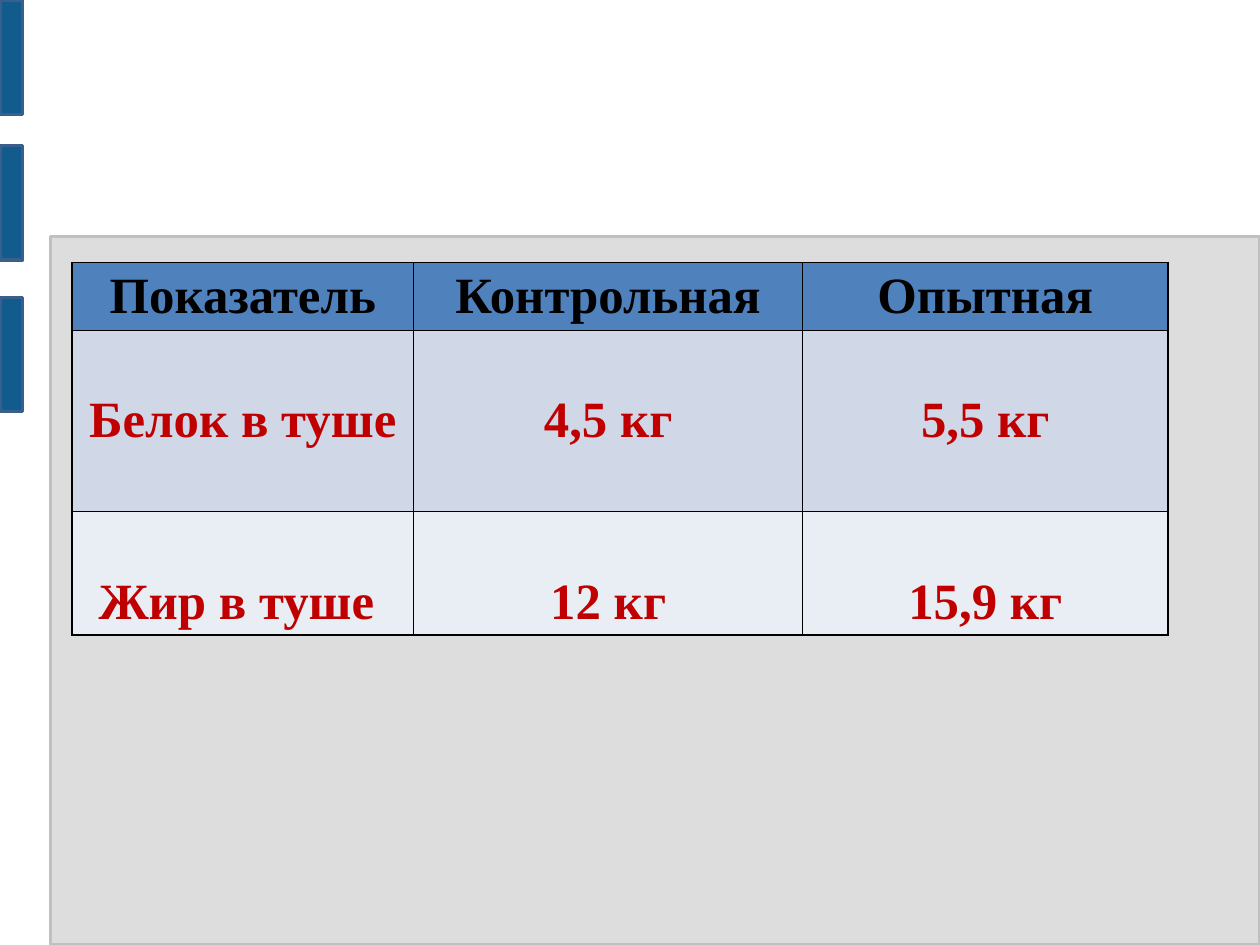
import pptx
import pptx.dml.color
import pptx.enum.shapes
import pptx.enum.text
import pptx.oxml
import pptx.oxml.ns
import pptx.util

COLUMN_WIDTHS = (215.28, 245, 230.2)
ROWS = (
    (42.8, "4F81BD", "000000", "MIDDLE", ("Показатель", "Контрольная", "Опытная")),
    (114, "D0D8E8", "C00000", "MIDDLE", ("Белок в туше", "4,5 кг", "5,5 кг")),
    (78, "E9EDF4", "C00000", "BOTTOM", ("Жир в туше ", "12 кг", "15,9 кг")),
)


def paint(color_format, color):
    color_format.rgb = pptx.dml.color.RGBColor.from_string(color)


def fill_with(item, color):
    item.fill.solid()
    paint(item.fill.fore_color, color)


def add_box(page, left, top, width, height, fill, line):
    lengths = [pptx.util.Pt(value) for value in (left, top, width, height)]
    box = page.shapes.add_shape(pptx.enum.shapes.MSO_SHAPE.RECTANGLE, *lengths)
    box.shadow.inherit = False
    fill_with(box, fill)
    paint(box.line.color, line)
    box.line.width = pptx.util.Pt(2)


def write_text(frame, text, size=32, font="Times New Roman", color="000000", bold=True):
    para = frame.paragraphs[0]
    para.alignment = pptx.enum.text.PP_ALIGN.CENTER
    span = para.add_run()
    span.text = text
    span.font.size = pptx.util.Pt(size)
    span.font.name = font
    span.font.bold = bold
    paint(span.font.color, color)


def add_borders(cell, color="000000", width=1):
    properties = cell._tc.get_or_add_tcPr()
    namespace = pptx.oxml.ns.nsdecls("a")
    for position, side in enumerate(("lnL", "lnR", "lnT", "lnB")):
        properties.insert(position, pptx.oxml.parse_xml(
            f'<a:{side} {namespace} w="{pptx.util.Pt(width)}"><a:solidFill>'
            f'<a:srgbClr val="{color}"/></a:solidFill></a:{side}>'))


def format_cell(cell, text, fill, color, anchor):
    fill_with(cell, fill)
    cell.margin_top = cell.margin_bottom = pptx.util.Pt(3)
    cell.vertical_anchor = pptx.enum.text.MSO_ANCHOR[anchor]
    write_text(cell.text_frame, text, color=color)
    add_borders(cell)


def add_results_table(page, left, top):
    width = sum(COLUMN_WIDTHS)
    height = sum(row[0] for row in ROWS)
    lengths = [pptx.util.Pt(value) for value in (left, top, width, height)]
    table = page.shapes.add_table(len(ROWS), len(COLUMN_WIDTHS), *lengths).table
    for column, column_width in zip(table.columns, COLUMN_WIDTHS):
        column.width = pptx.util.Pt(column_width)
    for row, (row_height, fill, color, anchor, texts) in zip(table.rows, ROWS):
        row.height = pptx.util.Pt(row_height)
        for cell, text in zip(row.cells, texts):
            format_cell(cell, text, fill, color, anchor)


def main():
    deck = pptx.Presentation()
    deck.slide_width = pptx.util.Pt(793.7)
    deck.slide_height = pptx.util.Pt(595.28)
    page = deck.slides.add_slide(deck.slide_layouts[6])
    add_box(page, 31.7, 149, 762, 446, "DDDDDD", "C0C0C0")
    for top in (0, 91.8, 187.4):
        add_box(page, 0, top, 14.4, 72, "125C8D", "3A5F8C")
    add_results_table(page, 45.36, 165.3)
    deck.save("out.pptx")


if __name__ == "__main__":
    main()
